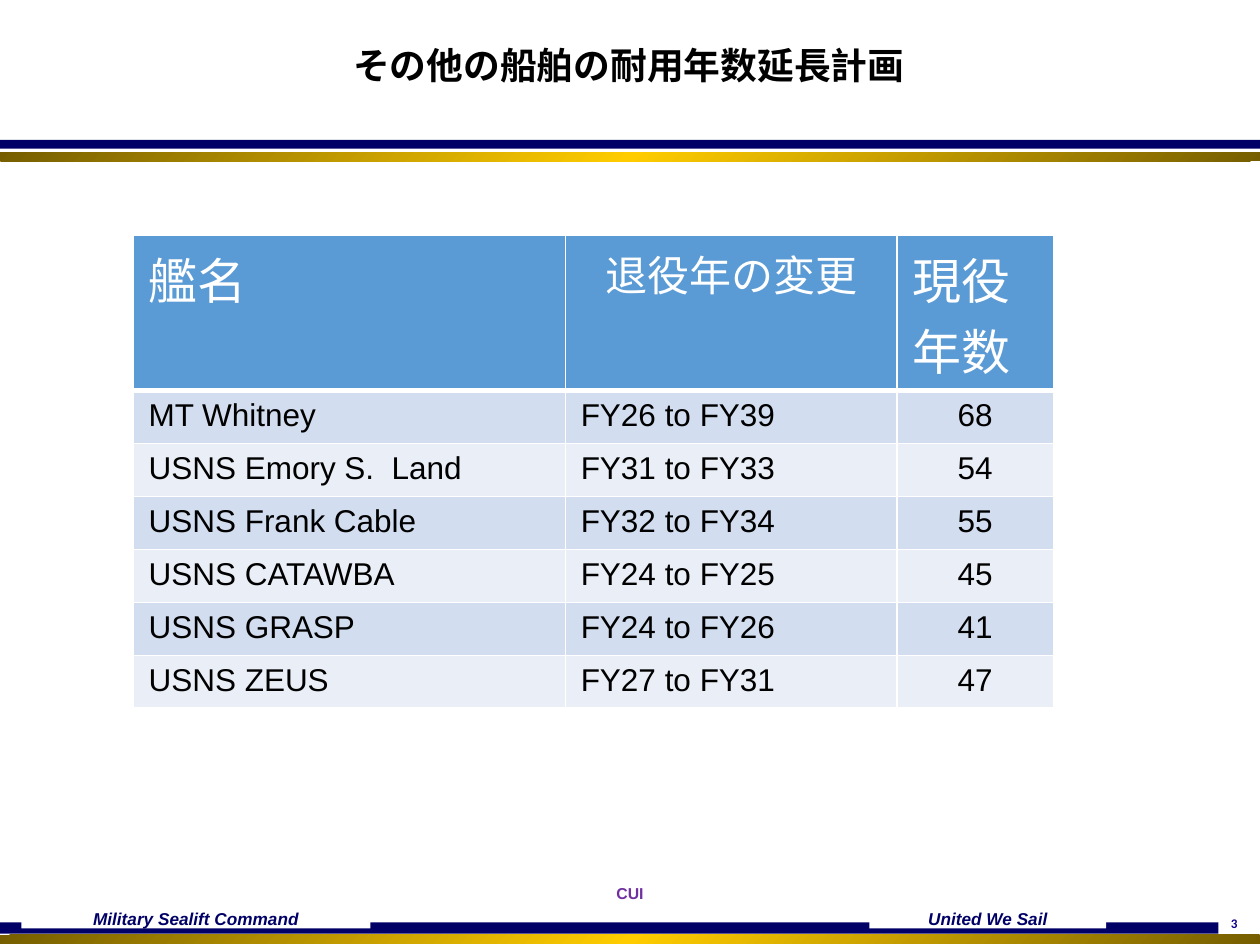
import copy
import lxml.etree
import pptx
import pptx.dml.color
import pptx.enum.shapes
import pptx.enum.text
import pptx.oxml.ns
import pptx.util

ALIGN = pptx.enum.text.PP_ALIGN
ANCHOR = pptx.enum.text.MSO_ANCHOR
RECTANGLE = pptx.enum.shapes.MSO_SHAPE.RECTANGLE
qn = pptx.oxml.ns.qn


def color(value):
    return pptx.dml.color.RGBColor.from_string(value)


def write_text(frame, text, size, font="Arial", fill="000000", bold=False,
               italic=False, align=ALIGN.CENTER, spacing=None):
    paragraph = frame.paragraphs[0]
    paragraph.alignment = align
    paragraph.line_spacing = spacing
    run = paragraph.add_run()
    run.text = text
    run.font.size = pptx.util.Pt(size)
    run.font.name = font
    run.font.bold = bold
    run.font.italic = italic
    run.font.color.rgb = color(fill)


presentation = pptx.Presentation()
presentation.slide_width = pptx.util.Inches(10)
presentation.slide_height = pptx.util.Inches(7.5)
slide = presentation.slides.add_slide(presentation.slide_layouts[6])
column = presentation.slide_width // 1000
row = presentation.slide_height // 750

navy = "000066"
gold = ["765E00", "FFCC00", "765E00"]

bars = [
    (0, 111, 1000, 7, navy, None),
    (0, 121, 1000, 7, gold, None),
    (0, 732, 967, 9, navy, None),
    (0, 742, 1000, 7, gold, None),
    (17, 721, 277, 16, "FFFFFF", "Military Sealift Command"),
    (690, 721, 188, 16, "FFFFFF", "United We Sail"),
]
for left, top, width, height, fill, label in bars:
    bar = slide.shapes.add_shape(
        RECTANGLE, left * column, top * row, width * column, height * row)
    bar.shadow.inherit = False
    bar.line.fill.background()
    if fill == gold:
        bar.fill.gradient()
        bar.fill.gradient_angle = 315
        stops = bar.element.spPr.find(".//" + qn("a:gsLst"))
        stops.insert(1, copy.deepcopy(stops[0]))
        for index, stop in enumerate(bar.fill.gradient_stops):
            stop.position = index / 2
            stop.color.rgb = color(gold[index])
    else:
        bar.fill.solid()
        bar.fill.fore_color.rgb = color(fill)
    if label:
        frame = bar.text_frame
        frame.word_wrap = True
        frame.margin_top = frame.margin_bottom = 0
        frame.vertical_anchor = ANCHOR.MIDDLE
        write_text(frame, label, 9.8, fill=navy, bold=True, italic=True)

texts = [
    (963, 724, 33, 20, "3", ANCHOR.TOP, False,
     dict(size=7.5, font="Calibri", fill="110189", spacing=0.8)),
    (0, 698, 1000, 33, "CUI", ANCHOR.TOP, True,
     dict(size=9, fill="7030A0", spacing=0.9)),
    (0, 0, 998, 108, "その他の船舶の耐用年数延長計画", ANCHOR.MIDDLE, True,
     dict(size=21, spacing=0.9)),
]
for left, top, width, height, text, anchor, wrap, style in texts:
    box = slide.shapes.add_textbox(
        left * column, top * row, width * column, height * row)
    box.text_frame.word_wrap = wrap
    box.text_frame.vertical_anchor = anchor
    write_text(box.text_frame, text, bold=True, **style)

ships = [
    ("艦名", "退役年の変更", "現役年数"),
    ("MT Whitney", "FY26 to FY39", "68"),
    ("USNS Emory S.  Land", "FY31 to FY33", "54"),
    ("USNS Frank Cable", "FY32 to FY34", "55"),
    ("USNS CATAWBA", "FY24 to FY25", "45"),
    ("USNS GRASP", "FY24 to FY26", "41"),
    ("USNS ZEUS", "FY27 to FY31", "47"),
]
widths = [343, 263, 124]
heights = [123] + [41] * 6
header_sizes = [28, 24, 28]
band_fills = ["EAEFF7", "D2DEEF"]

table = slide.shapes.add_table(
    len(ships), len(widths), 106 * column, 187 * row,
    sum(widths) * column, sum(heights) * row).table
for index, width in enumerate(widths):
    table.columns[index].width = width * column
for index, height in enumerate(heights):
    table.rows[index].height = height * row

for line, ship in enumerate(ships):
    for position, text in enumerate(ship):
        cell = table.cell(line, position)
        cell.margin_left = cell.margin_right = 12 * column
        cell.margin_top = cell.margin_bottom = 6 * row
        properties = cell._tc.get_or_add_tcPr()
        for side in ("lnL", "lnR", "lnT", "lnB"):
            thick = (line, side) in [(0, "lnB"), (1, "lnT")]
            border = lxml.etree.SubElement(
                properties, qn("a:" + side), w=str(pptx.util.Pt(3 if thick else 1)))
            solid = lxml.etree.SubElement(border, qn("a:solidFill"))
            lxml.etree.SubElement(solid, qn("a:srgbClr"), val="FFFFFF")
        cell.fill.solid()
        if line == 0:
            cell.fill.fore_color.rgb = color("5B9BD5")
            write_text(cell.text_frame, text, header_sizes[position],
                       font="Calibri", fill="FFFFFF",
                       align=ALIGN.CENTER if position == 1 else ALIGN.LEFT)
        else:
            cell.fill.fore_color.rgb = color(band_fills[line % 2])
            write_text(cell.text_frame, text, 18,
                       align=ALIGN.CENTER if position == 2 else ALIGN.LEFT)

presentation.save("out.pptx")
